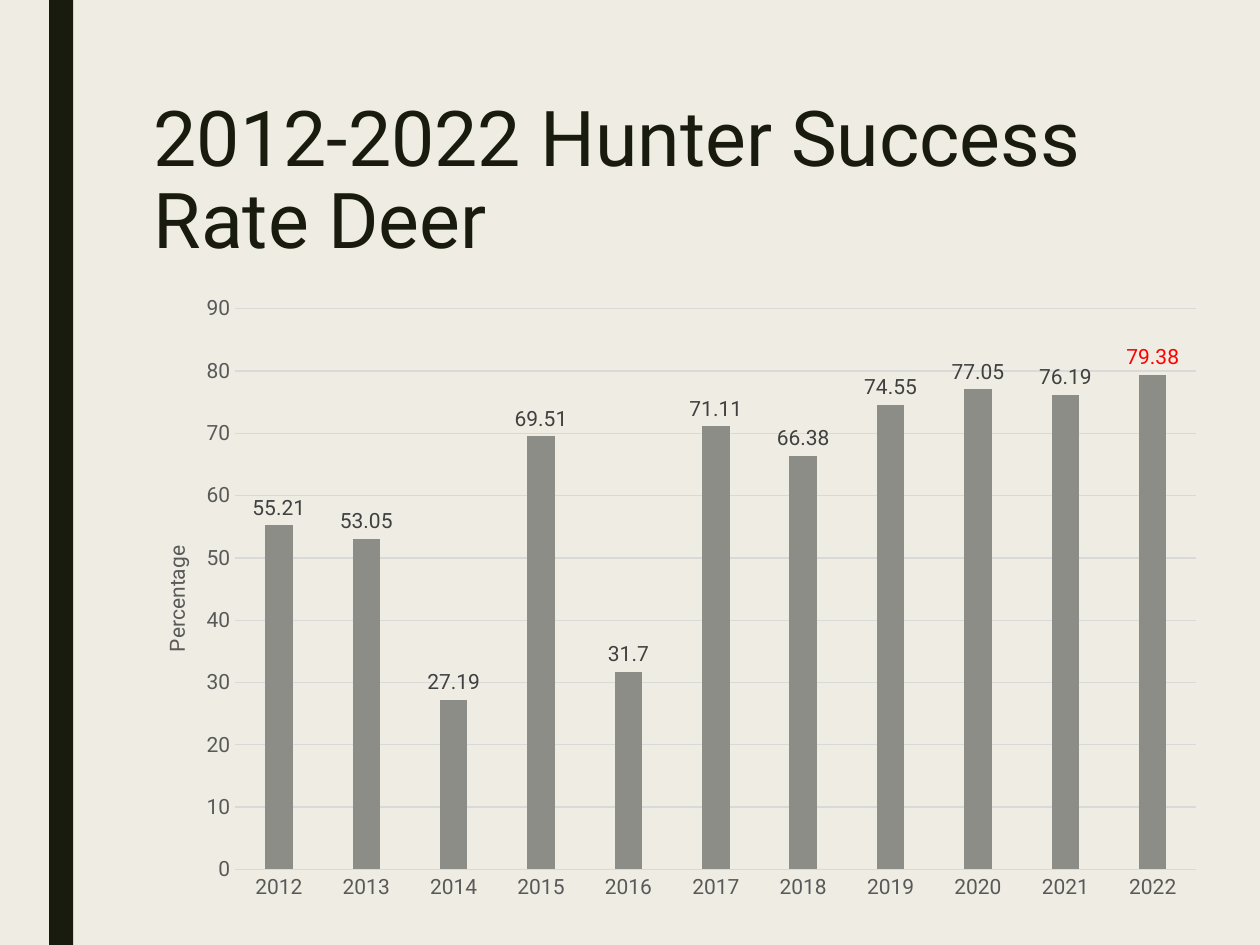
import pptx
import pptx.chart.data
import pptx.dml.color
import pptx.enum.chart
import pptx.enum.text
import pptx.oxml
import pptx.oxml.ns
import pptx.util

theme = {
    "font": "Roboto",
    "paper": "EFEDE3",
    "ink": "191B0E",
    "bar": "8C8D86",
    "grid": "D9D9D9",
    "axis": "595959",
    "label": "404040",
    "accent": "FF0000",
    "title": 44,
    "small": 12,
}
rates = {
    2012: 55.21, 2013: 53.05, 2014: 27.19, 2015: 69.51, 2016: 31.7, 2017: 71.11,
    2018: 66.38, 2019: 74.55, 2020: 77.05, 2021: 76.19, 2022: 79.38,
}


def style(font, size, color):
    font.name = theme["font"]
    font.size = pptx.util.Pt(theme[size])
    font.bold = False
    font.color.rgb = pptx.dml.color.RGBColor.from_string(theme[color])


def place(node, index, **parts):
    for old in node.findall(pptx.oxml.ns.qn("c:layout")):
        node.remove(old)
    tags = "".join(f'<c:{key} val="{val}"/>' for key, val in parts.items())
    space = pptx.oxml.ns.nsdecls("c")
    node.insert(index, pptx.oxml.parse_xml(
        f"<c:layout {space}><c:manualLayout>{tags}</c:manualLayout></c:layout>"))


deck = pptx.Presentation()
deck.slide_width = pptx.util.Inches(10)
deck.slide_height = pptx.util.Inches(7.5)
wide, high = deck.slide_width, deck.slide_height
slide = deck.slides.add_slide(deck.slide_layouts[5])
back = slide.background.fill
back.solid()
back.fore_color.rgb = pptx.dml.color.RGBColor.from_string(theme["paper"])

stripe = slide.shapes.add_shape(
    pptx.enum.shapes.MSO_SHAPE.RECTANGLE, int(wide * 0.039), 0, int(wide * 0.019), high)
stripe.shadow.inherit = False
stripe.fill.solid()
stripe.fill.fore_color.rgb = pptx.dml.color.RGBColor.from_string(theme["ink"])
stripe.line.fill.background()

title = slide.shapes.title
title.left, title.top = int(wide * 0.112), int(high * 0.1)
title.width, title.height = int(wide * 0.788), int(high * 0.216)
frame = title.text_frame
frame.text = "2012-2022 Hunter Success Rate Deer"
frame.word_wrap = True
frame.auto_size = pptx.enum.text.MSO_AUTO_SIZE.NONE
frame.vertical_anchor = pptx.enum.text.MSO_ANCHOR.TOP
head = frame.paragraphs[0]
head.alignment = pptx.enum.text.PP_ALIGN.LEFT
head.line_spacing = 0.89
style(head.runs[0].font, "title", "ink")

data = pptx.chart.data.CategoryChartData()
data.categories = [str(year) for year in rates]
data.add_series("Series 1", rates.values())
chart = slide.shapes.add_chart(
    pptx.enum.chart.XL_CHART_TYPE.COLUMN_CLUSTERED,
    int(wide * 0.1), int(high * 0.3), int(wide * 0.867), int(high * 0.667), data).chart
chart.has_legend = False
chart.has_title = False
style(chart.font, "small", "axis")

years, scale = chart.category_axis, chart.value_axis
for axis in (years, scale):
    axis.major_tick_mark = pptx.enum.chart.XL_TICK_MARK.NONE
    axis.minor_tick_mark = pptx.enum.chart.XL_TICK_MARK.NONE
    style(axis.tick_labels.font, "small", "axis")
scale.minimum_scale, scale.maximum_scale, scale.major_unit = 0, 90, 10
scale.has_major_gridlines = True
scale.format.line.fill.background()
for line in (years.format.line, scale.major_gridlines.format.line):
    line.width = pptx.util.Pt(0.75)
    line.color.rgb = pptx.dml.color.RGBColor.from_string(theme["grid"])

name = scale.axis_title
name.text_frame.text = "Percentage"
style(name.text_frame.paragraphs[0].runs[0].font, "small", "axis")
place(name.format.line and scale.axis_title._element, 1,
      xMode="edge", yMode="edge", x=0.03, y=0.41)

plot = chart.plots[0]
plot.gap_width = 219
plot.overlap = -27
plot.vary_by_categories = False
place(chart._chartSpace.chart.plotArea, 0, layoutTarget="inner",
      xMode="edge", yMode="edge", x=0.1, y=0.04, w=0.88, h=0.89)

bars = plot.series[0]
bars.format.fill.solid()
bars.format.fill.fore_color.rgb = pptx.dml.color.RGBColor.from_string(theme["bar"])
labels = bars.data_labels
labels.show_value = True
labels.position = pptx.enum.chart.XL_LABEL_POSITION.OUTSIDE_END
style(labels.font, "small", "label")
last = bars.points[len(rates) - 1].data_label
style(last.font, "small", "accent")
last.position = pptx.enum.chart.XL_LABEL_POSITION.OUTSIDE_END

deck.save("out.pptx")
